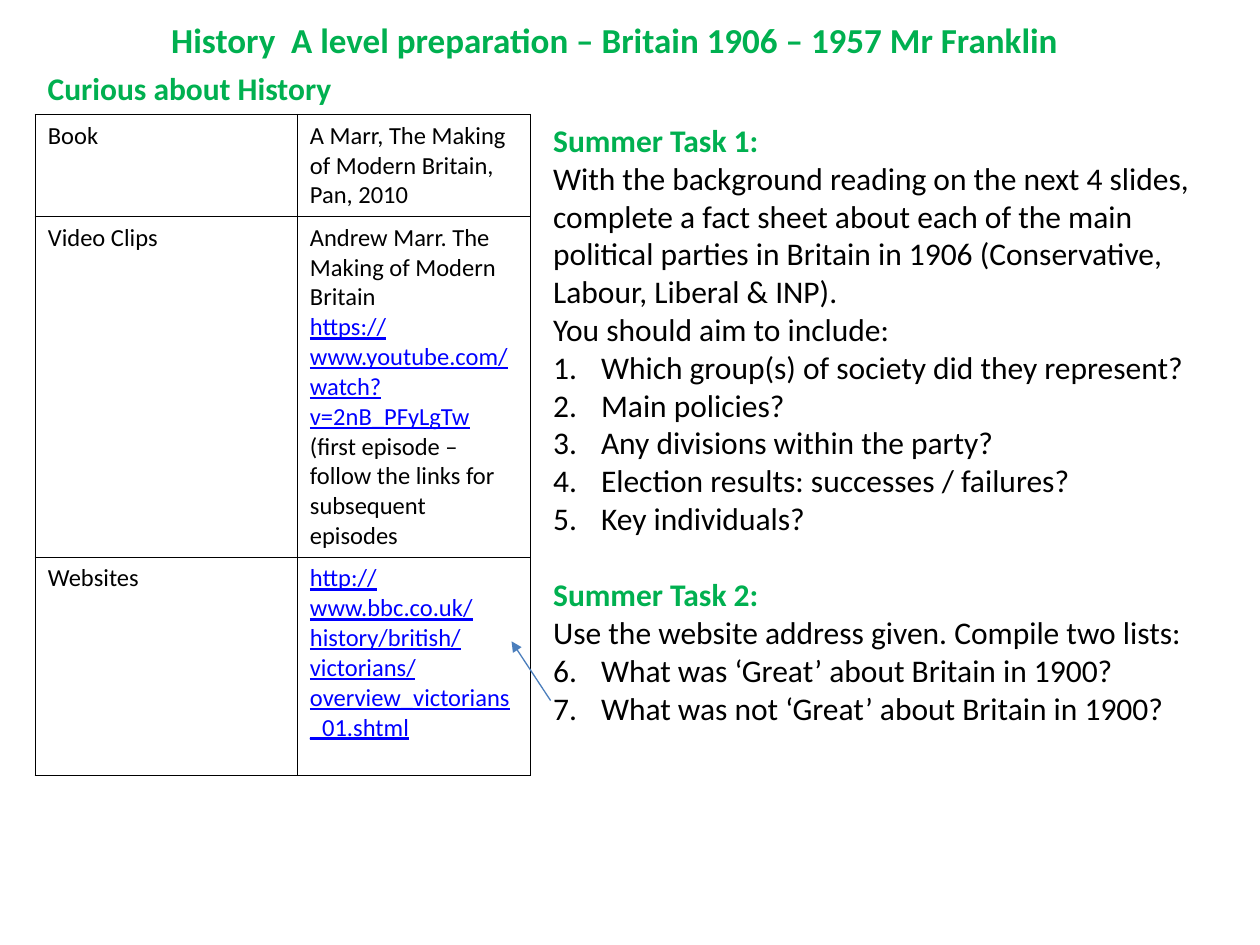
"""Build the History A level preparation slide."""
from dataclasses import dataclass

from lxml import etree
from pptx import Presentation
from pptx.dml.color import RGBColor
from pptx.enum import shapes, text
from pptx.oxml import ns
from pptx.util import Inches, Pt

GREEN = RGBColor(0x00, 0xB0, 0x50)
BLACK = RGBColor(0x00, 0x00, 0x00)
LINK_BLUE = RGBColor(0x00, 0x00, 0xFF)
ARROW_BLUE = RGBColor(0x4B, 0x7E, 0xBC)
FONT = "Calibri"


@dataclass(frozen=True)
class Line:
    wording: str
    size: int = 18
    color: RGBColor = BLACK
    bold: bool = False
    underline: bool = False
    number: int = 0
    gap: int = 0
    align: text.PP_ALIGN = text.PP_ALIGN.LEFT


@dataclass(frozen=True)
class Resource:
    label: str
    details: tuple[Line, ...]
    height: float


@dataclass(frozen=True)
class Task:
    heading: str
    intro: tuple[str, ...]
    questions: tuple[str, ...]
    first_number: int
    gap: int = 0

    def lines(self) -> list[Line]:
        return [
            Line(self.heading, color=GREEN, bold=True, gap=self.gap),
            *(Line(sentence) for sentence in self.intro),
            *(Line(question, number=self.first_number) for question in self.questions),
        ]


RESOURCES = (
    Resource("Book", (Line("A Marr, The Making of Modern Britain, Pan, 2010", 14),), 0.8),
    Resource("Video Clips", (
        Line("Andrew Marr. The Making of Modern Britain", 14),
        Line("https://www.youtube.com/watch?v=2nB_PFyLgTw", 14, LINK_BLUE, underline=True),
        Line("(first episode – follow the links for subsequent episodes", 14),
    ), 2.67),
    Resource("Websites", (
        Line("http://www.bbc.co.uk/history/british/victorians/overview_victorians_01.shtml",
             14, LINK_BLUE, underline=True),
    ), 1.73),
)
TASKS = (
    Task("Summer Task 1:", (
        "With the background reading on the next 4 slides, complete a fact sheet about "
        "each of the main political parties in Britain in 1906 (Conservative, Labour, "
        "Liberal & INP).",
        "You should aim to include:",
    ), (
        "Which group(s) of society did they represent?",
        "Main policies?",
        "Any divisions within the party?",
        "Election results: successes / failures?",
        "Key individuals?",
    ), 1),
    Task("Summer Task 2:", ("Use the website address given. Compile two lists:",), (
        "What was ‘Great’ about Britain in 1900?",
        "What was not ‘Great’ about Britain in 1900?",
    ), 6, gap=22),
)


def add_element(parent, tag: str, **attributes: str):
    return etree.SubElement(parent, ns.qn(tag), attributes)


def write_lines(frame, lines: list[Line]) -> None:
    frame.word_wrap = True
    for index, line in enumerate(lines):
        paragraph = frame.paragraphs[0] if index == 0 else frame.add_paragraph()
        paragraph.text = line.wording
        paragraph.alignment = line.align
        paragraph.space_before = Pt(line.gap)
        properties = paragraph._p.get_or_add_pPr()
        indent = Inches(0.38) if line.number else 0
        properties.set("marL", str(indent))
        properties.set("indent", str(-indent))
        if line.number:
            add_element(properties, "a:buFont", typeface="+mj-lt")
            add_element(properties, "a:buAutoNum", type="arabicPeriod",
                        startAt=str(line.number))
        else:
            add_element(properties, "a:buNone")
        font = paragraph.font
        font.name, font.size, font.bold = FONT, Pt(line.size), line.bold
        font.underline = line.underline
        font.color.rgb = line.color


def place_text(shape, left: float, top: float, width: float, height: float,
               lines: list[Line]) -> None:
    shape.left, shape.top = Inches(left), Inches(top)
    shape.width, shape.height = Inches(width), Inches(height)
    frame = shape.text_frame
    frame.auto_size = text.MSO_AUTO_SIZE.NONE
    frame.vertical_anchor = text.MSO_ANCHOR.TOP
    write_lines(frame, lines)


def format_cell(cell, lines: list[Line]) -> None:
    write_lines(cell.text_frame, lines)
    properties = cell._tc.get_or_add_tcPr()
    for side in ("a:lnL", "a:lnR", "a:lnT", "a:lnB"):
        border = add_element(properties, side, w=str(Pt(1)))
        add_element(add_element(border, "a:solidFill"), "a:srgbClr", val=str(BLACK))
    cell.fill.background()


def add_resources(slide) -> None:
    height = sum(resource.height for resource in RESOURCES)
    table = slide.shapes.add_table(len(RESOURCES), 2, Inches(0.28), Inches(0.91),
                                   Inches(3.93), Inches(height)).table
    table.first_row = table.horz_banding = False
    for column, width in zip(table.columns, (2.08, 1.85)):
        column.width = Inches(width)
    for index, resource in enumerate(RESOURCES):
        table.rows[index].height = Inches(resource.height)
        format_cell(table.cell(index, 0), [Line(resource.label, 14)])
        format_cell(table.cell(index, 1), list(resource.details))


def add_website_arrow(slide) -> None:
    arrow = slide.shapes.add_connector(shapes.MSO_CONNECTOR.STRAIGHT, Inches(4.37),
                                       Inches(5.56), Inches(4.06), Inches(5.09))
    arrow.line.color.rgb = ARROW_BLUE
    arrow.line.width = Pt(0.75)
    add_element(arrow.line._get_or_add_ln(), "a:tailEnd", type="triangle")
    add_element(arrow._element.spPr, "a:effectLst")


def main() -> None:
    presentation = Presentation()
    presentation.slide_width, presentation.slide_height = Inches(10), Inches(7.5)
    slide = presentation.slides.add_slide(presentation.slide_layouts[1])
    title, tasks = slide.placeholders
    place_text(title, 1.14, 0.1, 7.48, 0.44, [
        Line("History  A level preparation – Britain 1906 – 1957 Mr Franklin",
             20, GREEN, bold=True, align=text.PP_ALIGN.CENTER)])
    add_resources(slide)
    subtitle = slide.shapes.add_textbox(0, 0, 0, 0)
    place_text(subtitle, 0.28, 0.5, 3.62, 0.4,
               [Line("Curious about History", color=GREEN, bold=True)])
    place_text(tasks, 4.29, 0.91, 5.28, 6.16,
               [line for task in TASKS for line in task.lines()])
    add_website_arrow(slide)
    presentation.save("out.pptx")


if __name__ == "__main__":
    main()
